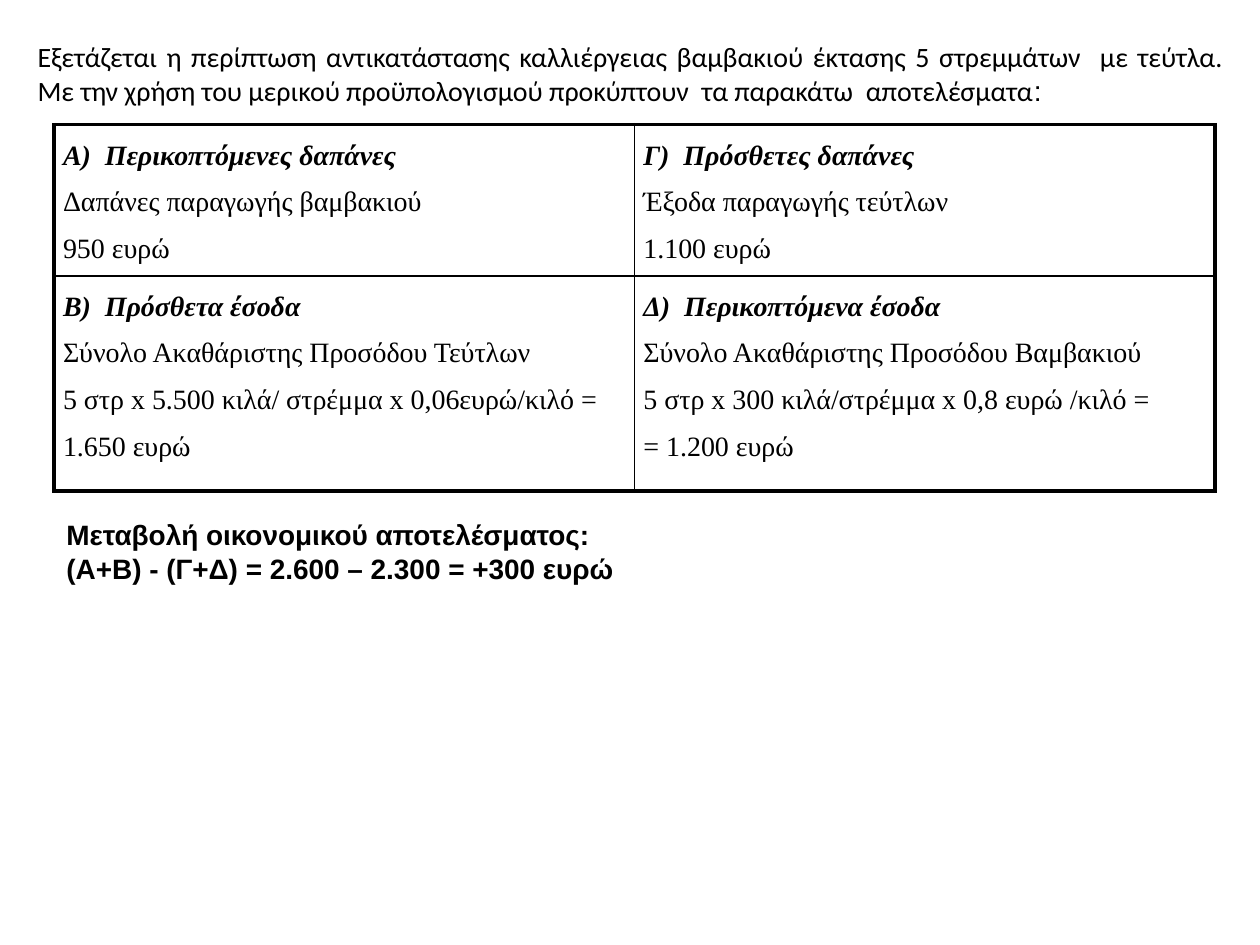
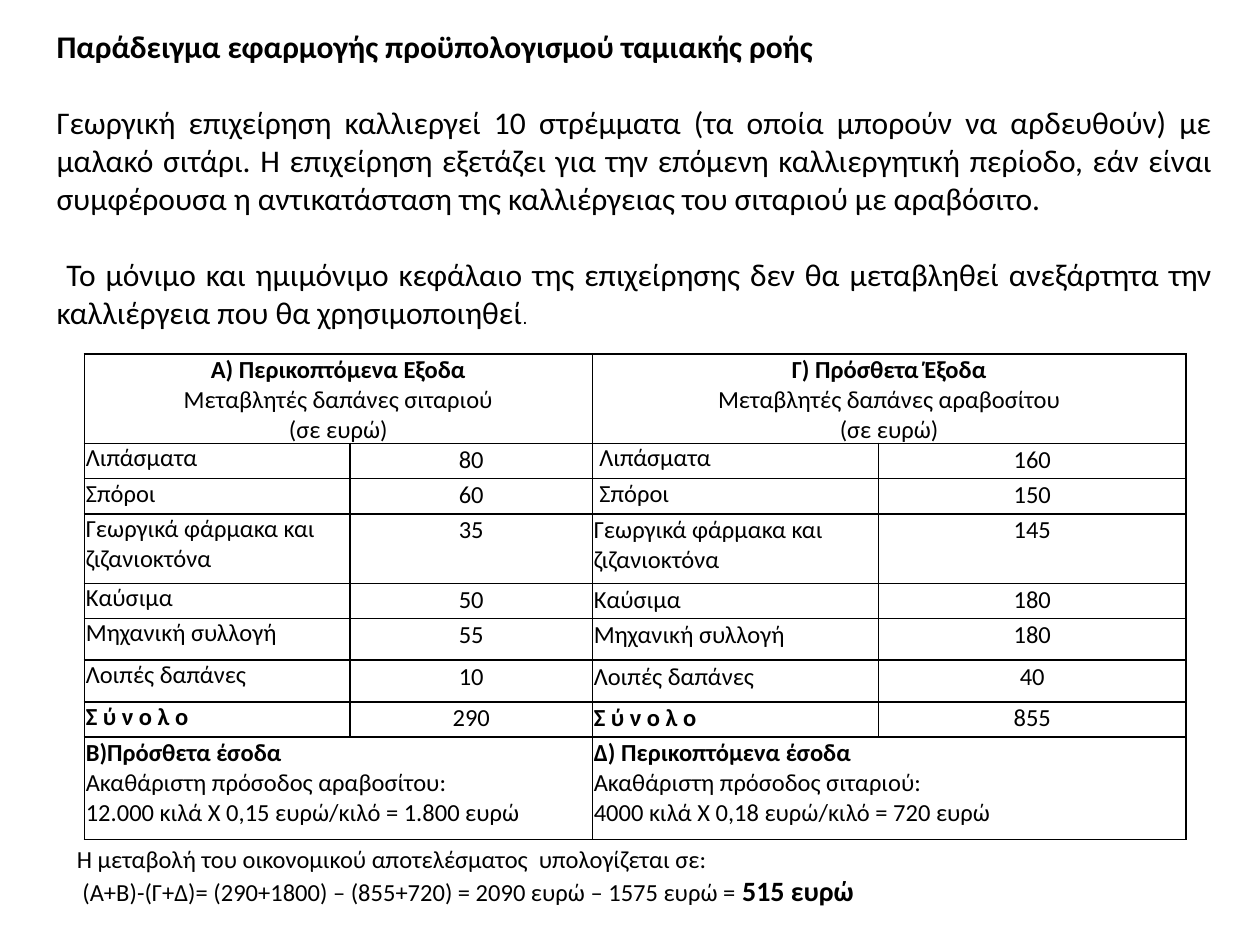
"""Build two slides on partial budgeting of crop replacement."""
from dataclasses import dataclass, field
from typing import Any, Callable

import pptx
import pptx.dml.color
import pptx.enum.text
import pptx.oxml
import pptx.oxml.ns
import pptx.util

Cm = pptx.util.Cm
Pt = pptx.util.Pt
ALIGN = pptx.enum.text.PP_ALIGN
ANCHOR = pptx.enum.text.MSO_ANCHOR


@dataclass(frozen=True)
class Theme:
    ink: str = "000000"
    sans: str = "Calibri"
    plain: str = "Arial"
    serif: str = "Times New Roman"
    tiny: int = 11
    small: int = 14
    medium: int = 16
    large: int = 18
    thin: float = 1
    rule: float = 1.5
    thick: float = 2.25


T = Theme()
SMALL = {"name": T.sans, "size": Pt(T.small)}
MEDIUM = {"name": T.sans, "size": Pt(T.medium)}
LARGE = {"name": T.sans, "size": Pt(T.large)}
SERIF = {"name": T.serif, "size": Pt(T.medium)}
PLAIN = {"name": T.plain, "size": Pt(T.medium)}
BOLD = {"bold": True}
JUSTIFY = {"alignment": ALIGN.JUSTIFY}
CENTER = {"alignment": ALIGN.CENTER}
LEFT = {"alignment": ALIGN.LEFT}


@dataclass
class Run:
    text: str
    font: dict[str, Any]


@dataclass
class Para:
    runs: list[Run]
    layout: dict[str, Any] = field(default_factory=lambda: JUSTIFY)


@dataclass
class TextBox:
    left: float
    top: float
    width: float
    height: float
    paras: list[Para]
    anchor: Any = ANCHOR.MIDDLE


@dataclass
class Cell:
    paras: list[Para]
    span: int = 1
    top_margin: float = 0


@dataclass
class Grid:
    left: float
    top: float
    cols: list[float]
    rows: list[float]
    cells: list[list[Cell]]
    side_margin: float
    row_line: Callable[[int], float]
    col_line: Callable[[int], float]


def apply(target: Any, values: dict[str, Any]) -> None:
    """Set every named attribute on the target."""
    for name, value in values.items():
        setattr(target, name, value)


def write(tf: Any, paras: list[Para]) -> None:
    """Fill a text frame with formatted paragraphs."""
    for i, para in enumerate(paras):
        p = tf.add_paragraph() if i else tf.paragraphs[0]
        apply(p, para.layout)
        for run in para.runs:
            r = p.add_run()
            r.text = run.text
            apply(r.font, run.font)
            r.font.color.rgb = pptx.dml.color.RGBColor.from_string(T.ink)


def draw_text(s: Any, box: TextBox) -> None:
    """Add a wrapped text box."""
    sp = s.shapes.add_textbox(Cm(box.left), Cm(box.top), Cm(box.width), Cm(box.height))
    tf = sp.text_frame
    apply(tf, {"word_wrap": True, "vertical_anchor": box.anchor,
               "auto_size": pptx.enum.text.MSO_AUTO_SIZE.SHAPE_TO_FIT_TEXT})
    write(tf, box.paras)


def set_borders(cell: Any, widths: dict[str, float]) -> None:
    """Give a cell solid borders ahead of its fill."""
    tc_pr = cell._tc.get_or_add_tcPr()
    for i, (side, width) in enumerate(widths.items()):
        tc_pr.insert(i, pptx.oxml.parse_xml(
            f'<a:ln{side} {pptx.oxml.ns.nsdecls("a")} w="{Pt(width)}"><a:solidFill>'
            f'<a:srgbClr val="{T.ink}"/></a:solidFill></a:ln{side}>'))


def draw_grid(s: Any, grid: Grid) -> None:
    """Add a table with merged cells and ruled borders."""
    frame = s.shapes.add_table(len(grid.rows), len(grid.cols), Cm(grid.left), Cm(grid.top),
                               Cm(sum(grid.cols)), Cm(sum(grid.rows)))
    table = frame.table
    apply(table, {"first_row": False, "horz_banding": False})
    for column, width in zip(table.columns, grid.cols):
        column.width = Cm(width)
    for r, height in enumerate(grid.rows):
        table.rows[r].height = Cm(height)
        for c in range(len(grid.cols)):
            cell = table.cell(r, c)
            cell.fill.background()
            set_borders(cell, {"L": grid.col_line(c), "R": grid.col_line(c + 1),
                               "T": grid.row_line(r), "B": grid.row_line(r + 1)})
        c = 0
        for item in grid.cells[r]:
            cell = table.cell(r, c)
            if item.span > 1:
                cell.merge(table.cell(r, c + item.span - 1))
            apply(cell, {"margin_left": Cm(grid.side_margin), "margin_right": Cm(grid.side_margin),
                         "margin_top": Cm(item.top_margin), "margin_bottom": 0})
            write(cell.text_frame, item.paras)
            c += item.span


def budget_cell(heading: str, *lines: str) -> Cell:
    """Make a serif cell with an italic heading."""
    spaced = LEFT | {"line_spacing": 1.5}
    head = Para([Run(heading, SERIF | BOLD | {"italic": True})], spaced | {"space_before": Pt(6)})
    return Cell([head] + [Para([Run(line, SERIF)], spaced) for line in lines])


def block_cell(layout: dict[str, Any], heading: str, *lines: str) -> Cell:
    """Make a two-column cell with a bold heading."""
    fonts = [SMALL | BOLD] + [SMALL] * len(lines)
    paras = [Para([Run(t, f)], layout) for t, f in zip((heading, *lines), fonts)]
    return Cell(paras, span=2, top_margin=0.02)


def cost_row(label: str, wheat: str, maize: str, indent: str = "",
             font: dict[str, Any] = SMALL) -> list[Cell]:
    """Make one row of wheat and maize costs."""
    return [Cell([Para([Run(label, font)], LEFT)]),
            Cell([Para([Run(wheat, SMALL)], CENTER)], top_margin=0.03),
            Cell([Para([Run(indent + label, font)], LEFT)], top_margin=0 if indent else 0.03),
            Cell([Para([Run(maize, SMALL)], CENTER)], top_margin=0.03)]


COTTON_INTRO = TextBox(0.51, 0.66, 24.41, 1.63, [Para([
    Run("Εξετάζεται η περίπτωση αντικατάστασης καλλιέργειας βαμβακιού έκτασης 5 στρεμμάτων  με "
        "τεύτλα. Με την χρήση του μερικού προϋπολογισμού προκύπτουν  τα παρακάτω  αποτελέσματα",
        MEDIUM),
    Run(":", PLAIN)])])

COTTON_GRID = Grid(
    1.09, 2.51, [11.7, 11.7], [3.05, 4.34],
    [[budget_cell("Α)  Περικοπτόμενες δαπάνες", "Δαπάνες παραγωγής βαμβακιού", "950 ευρώ"),
      budget_cell("Γ)  Πρόσθετες δαπάνες", "Έξοδα παραγωγής τεύτλων", "1.100 ευρώ")],
     [budget_cell("Β)  Πρόσθετα έσοδα", "Σύνολο Ακαθάριστης Προσόδου Τεύτλων",
                  "5 στρ x 5.500 κιλά/ στρέμμα x 0,06ευρώ/κιλό = 1.650 ευρώ"),
      budget_cell("Δ)  Περικοπτόμενα έσοδα", "Σύνολο Ακαθάριστης Προσόδου Βαμβακιού",
                  "5 στρ x 300 κιλά/στρέμμα x 0,8 ευρώ /κιλό =", "= 1.200 ευρώ")]],
    0.18,
    row_line=lambda r: T.thin if r == 1 else T.thick,
    col_line=lambda c: T.thin if c == 1 else T.thick)

COTTON_RESULT = TextBox(1.09, 10.31, 23.6, 1.63, [
    Para([Run("Μεταβολή οικονομικού αποτελέσματος:", PLAIN | BOLD)]),
    Para([Run("(Α+Β) - (Γ+Δ) = 2.600 – 2.300 = +300 ευρώ", PLAIN | BOLD)])], ANCHOR.TOP)

GAP = JUSTIFY | {"space_before": Pt(22)}
WHEAT_INTRO = TextBox(0.89, 0.41, 23.8, 6.4, [
    Para([Run("Παράδειγμα εφαρμογής προϋπολογισμού ταμιακής ροής", LARGE | BOLD)]),
    Para([Run("Γεωργική επιχείρηση καλλιεργεί 10 στρέμματα (τα οποία μπορούν να αρδευθούν) με μαλακό "
              "σιτάρι. Η επιχείρηση εξετάζει για την επόμενη καλλιεργητική περίοδο, εάν είναι "
              "συμφέρουσα η αντικατάσταση της καλλιέργειας του σιταριού με αραβόσιτο.", LARGE)], GAP),
    Para([Run(" Το μόνιμο και ημιμόνιμο κεφάλαιο της επιχείρησης δεν θα μεταβληθεί ανεξάρτητα την "
              "καλλιέργεια που θα χρησιμοποιηθεί", LARGE),
          Run(".", PLAIN | {"size": Pt(T.tiny)})], GAP)])

WHEAT_GRID = Grid(
    1.7, 7.14, [5.36, 4.88, 5.77, 6.2], [1.63, 0.71, 0.71, 1.4, 0.71, 0.84, 0.84, 0.71, 2.06],
    [[block_cell(CENTER, "Α) Περικοπτόμενα Εξοδα", "Μεταβλητές δαπάνες σιταριού", "(σε ευρώ)"),
      block_cell(CENTER, "Γ) Πρόσθετα Έξοδα", "Μεταβλητές δαπάνες αραβοσίτου", "(σε ευρώ)")],
     cost_row("Λιπάσματα", "80", "160", indent=" "),
     cost_row("Σπόροι", "60", "150", indent=" "),
     cost_row("Γεωργικά φάρμακα και ζιζανιοκτόνα", "35", "145"),
     cost_row("Καύσιμα", "50", "180"),
     cost_row("Μηχανική συλλογή", "55", "180"),
     cost_row("Λοιπές δαπάνες", "10", "40"),
     cost_row("Σ ύ ν ο λ ο", "290", "855", font=SMALL | BOLD),
     [block_cell(LEFT, "Β)Πρόσθετα έσοδα", "Ακαθάριστη πρόσοδος αραβοσίτου:",
                 "12.000 κιλά Χ 0,15 ευρώ/κιλό = 1.800 ευρώ"),
      block_cell(LEFT, "Δ) Περικοπτόμενα έσοδα", "Ακαθάριστη πρόσοδος σιταριού:",
                 "4000 κιλά Χ 0,18 ευρώ/κιλό = 720 ευρώ")]],
    0.03,
    row_line=lambda r: T.rule if r == 8 else T.thin,
    col_line=lambda c: T.thin)

WHEAT_RESULT = TextBox(1.3, 16.87, 22.81, 1.55, [
    Para([Run("Η μεταβολή του οικονομικού αποτελέσματος  υπολογίζεται σε:", SMALL)]),
    Para([Run(" (Α+Β)-(Γ+Δ)= (290+1800) – (855+720) = 2090 ευρώ – 1575 ευρώ = ", SMALL),
          Run("515 ευρώ", MEDIUM | BOLD)])])


def main() -> None:
    """Build and save the slides."""
    prs = pptx.Presentation()
    apply(prs, {"slide_width": Cm(25.4), "slide_height": Cm(19.05)})
    for intro, grid, result in ((COTTON_INTRO, COTTON_GRID, COTTON_RESULT),
                                (WHEAT_INTRO, WHEAT_GRID, WHEAT_RESULT)):
        s = prs.slides.add_slide(prs.slide_layouts[6])
        draw_text(s, intro)
        draw_grid(s, grid)
        draw_text(s, result)
    prs.save("out.pptx")


if __name__ == "__main__":
    main()
